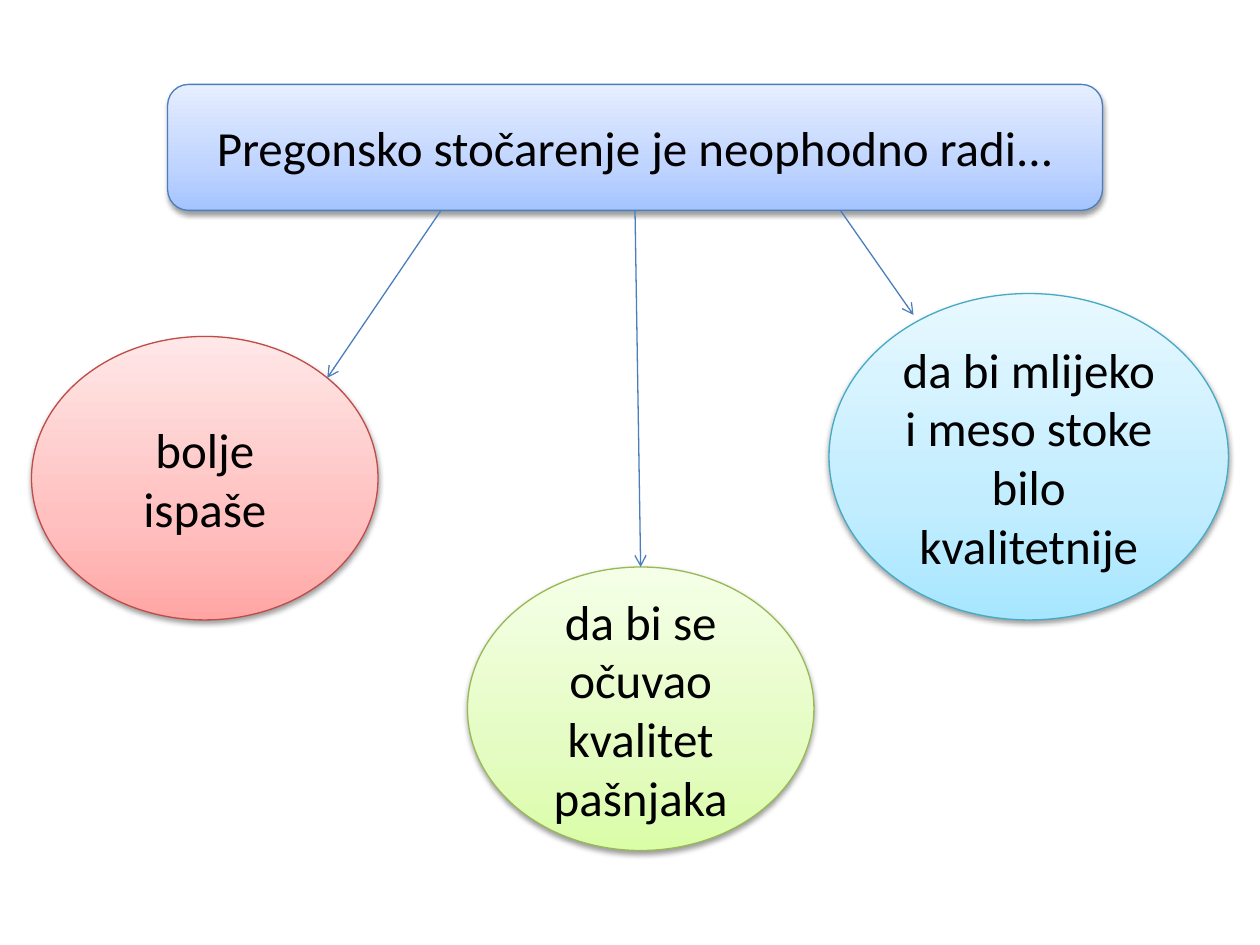
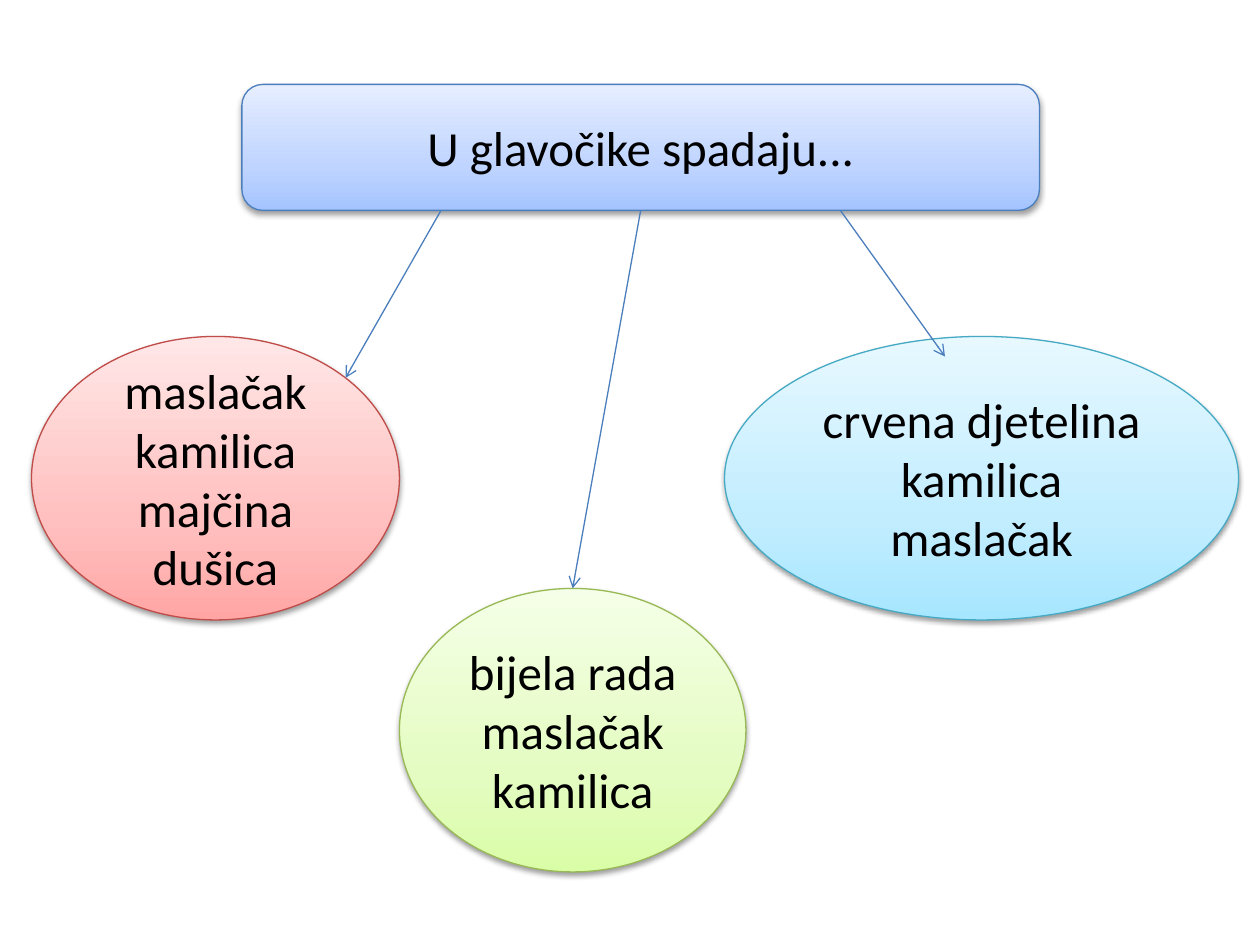
import dataclasses
import math

import lxml.etree
import pptx
import pptx.dml.color
import pptx.enum.shapes
import pptx.enum.text
import pptx.oxml.ns
import pptx.util

Inches = pptx.util.Inches
Pt = pptx.util.Pt
Shape = pptx.enum.shapes.MSO_SHAPE
qn = pptx.oxml.ns.qn


@dataclasses.dataclass(frozen=True)
class Tone:
    line: str
    bottom: str
    middle: str
    top: str


@dataclasses.dataclass(frozen=True)
class Theme:
    blue: Tone = Tone("4B7EBC", "A4C4FF", "BFD4FF", "E6EEFF")
    red: Tone = Tone("BF4C48", "FFA6A5", "FFC0BF", "FFE7E7")
    green: Tone = Tone("98B955", "DAFDA7", "E4FCC2", "F5FFE7")
    aqua: Tone = Tone("46AAC5", "A7E6FF", "C1EDFF", "E7F8FF")
    ink: str = "000000"
    font: str = "Calibri"
    text_size: float = 28
    line_width: float = 0.75
    shadow_opacity: int = 38
    shadow_blur: float = 3.1
    shadow_distance: float = 1.6


THEME = Theme()
HEADER_TOP = 0.67
HEADER_HEIGHT = 1
HEADER_BOTTOM = HEADER_TOP + HEADER_HEIGHT
LEFT_ARROW_START = 3.5
RIGHT_ARROW_START = 6.67


def rgb(value):
    return pptx.dml.color.RGBColor.from_string(value)


def add_color(parent, value):
    return lxml.etree.SubElement(parent, qn("a:srgbClr"), val=value)


def paint_gradient(shape, tone):
    shape.fill.gradient()
    shape.fill.gradient_angle = 90
    stops = shape._element.spPr.find(".//" + qn("a:gsLst"))
    for stop in list(stops):
        stops.remove(stop)
    for percent, value in ((0, tone.bottom), (35, tone.middle), (100, tone.top)):
        stop = lxml.etree.SubElement(stops, qn("a:gs"), pos=str(percent * 1000))
        add_color(stop, value)


def style_line(line, value):
    line.color.rgb = rgb(value)
    line.width = Pt(THEME.line_width)


def cast_shadow(shape):
    shape.shadow.inherit = False
    effects = shape._element.spPr.find(qn("a:effectLst"))
    shadow = lxml.etree.SubElement(
        effects,
        qn("a:outerShdw"),
        blurRad=str(Pt(THEME.shadow_blur)),
        dist=str(Pt(THEME.shadow_distance)),
        dir=str(90 * 60000),
        rotWithShape="0",
    )
    color = add_color(shadow, THEME.ink)
    lxml.etree.SubElement(color, qn("a:alpha"), val=str(THEME.shadow_opacity * 1000))


def write_text(shape, lines):
    frame = shape.text_frame
    frame.word_wrap = True
    frame.vertical_anchor = pptx.enum.text.MSO_ANCHOR.MIDDLE
    for index, line in enumerate(lines):
        para = frame.add_paragraph() if index else frame.paragraphs[0]
        para.alignment = pptx.enum.text.PP_ALIGN.CENTER
        span = para.add_run()
        span.text = line
        span.font.name = THEME.font
        span.font.size = Pt(THEME.text_size)
        span.font.color.rgb = rgb(THEME.ink)


def add_bubble(page, kind, place, tone, lines):
    bubble = page.shapes.add_shape(kind, *map(Inches, place))
    paint_gradient(bubble, tone)
    style_line(bubble.line, tone.line)
    cast_shadow(bubble)
    write_text(bubble, lines)
    return bubble


def add_arrow(page, start, end):
    arrow = page.shapes.add_connector(
        pptx.enum.shapes.MSO_CONNECTOR.STRAIGHT, *map(Inches, (*start, *end))
    )
    style_line(arrow.line, THEME.blue.line)
    properties = arrow._element.spPr
    lxml.etree.SubElement(properties.find(qn("a:ln")), qn("a:tailEnd"), type="arrow")
    lxml.etree.SubElement(properties, qn("a:effectLst"))
    return arrow


def upper_right(place):
    left, top, width, height = place
    reach = math.sqrt(0.5)
    return left + width / 2 * (1 + reach), top + height / 2 * (1 - reach)


def top_middle(place):
    left, top, width, _ = place
    return left + width / 2, top


def add_branches(deck, heading, header_left, header_width, answers, right_arrow_end):
    page = deck.slides.add_slide(deck.slide_layouts[6])
    tones = (THEME.red, THEME.green, THEME.aqua)
    bubbles = [
        add_bubble(page, Shape.OVAL, place, tone, lines)
        for (place, lines), tone in zip(answers, tones)
    ]
    header_place = (header_left, HEADER_TOP, header_width, HEADER_HEIGHT)
    header = add_bubble(
        page, Shape.ROUNDED_RECTANGLE, header_place, THEME.blue, [heading]
    )
    left_place, middle_place = answers[0][0], answers[1][0]
    add_arrow(page, (LEFT_ARROW_START, HEADER_BOTTOM), upper_right(left_place))
    header_middle = (header_left + header_width / 2, HEADER_BOTTOM)
    middle_arrow = add_arrow(page, header_middle, top_middle(middle_place))
    middle_arrow.begin_connect(header, 2)
    middle_arrow.end_connect(bubbles[1], 0)
    add_arrow(page, (RIGHT_ARROW_START, HEADER_BOTTOM), right_arrow_end)


def main():
    deck = pptx.Presentation()
    deck.slide_width = Inches(10)
    deck.slide_height = Inches(7.5)
    add_branches(
        deck,
        "Pregonsko stočarenje je neophodno radi...",
        1.33,
        7.42,
        [
            ((0.25, 2.67, 2.75, 2.25), ["bolje ispaše"]),
            ((3.71, 4.5, 2.75, 2.25), ["da bi se očuvao kvalitet pašnjaka"]),
            (
                (6.58, 2.33, 3.17, 2.59),
                ["da bi mlijeko i meso stoke bilo kvalitetnije"],
            ),
        ],
        (7.25, 2.5),
    )
    add_branches(
        deck,
        "U glavočike spadaju...",
        1.92,
        6.33,
        [
            ((0.25, 2.67, 2.92, 2.25), ["maslačak", "kamilica", "majčina dušica"]),
            ((3.17, 4.67, 2.75, 2.25), ["bijela rada", "maslačak", "kamilica"]),
            ((5.75, 2.67, 4.08, 2.25), ["crvena djetelina", "kamilica", "maslačak"]),
        ],
        (7.5, 2.83),
    )
    deck.save("out.pptx")


if __name__ == "__main__":
    main()
